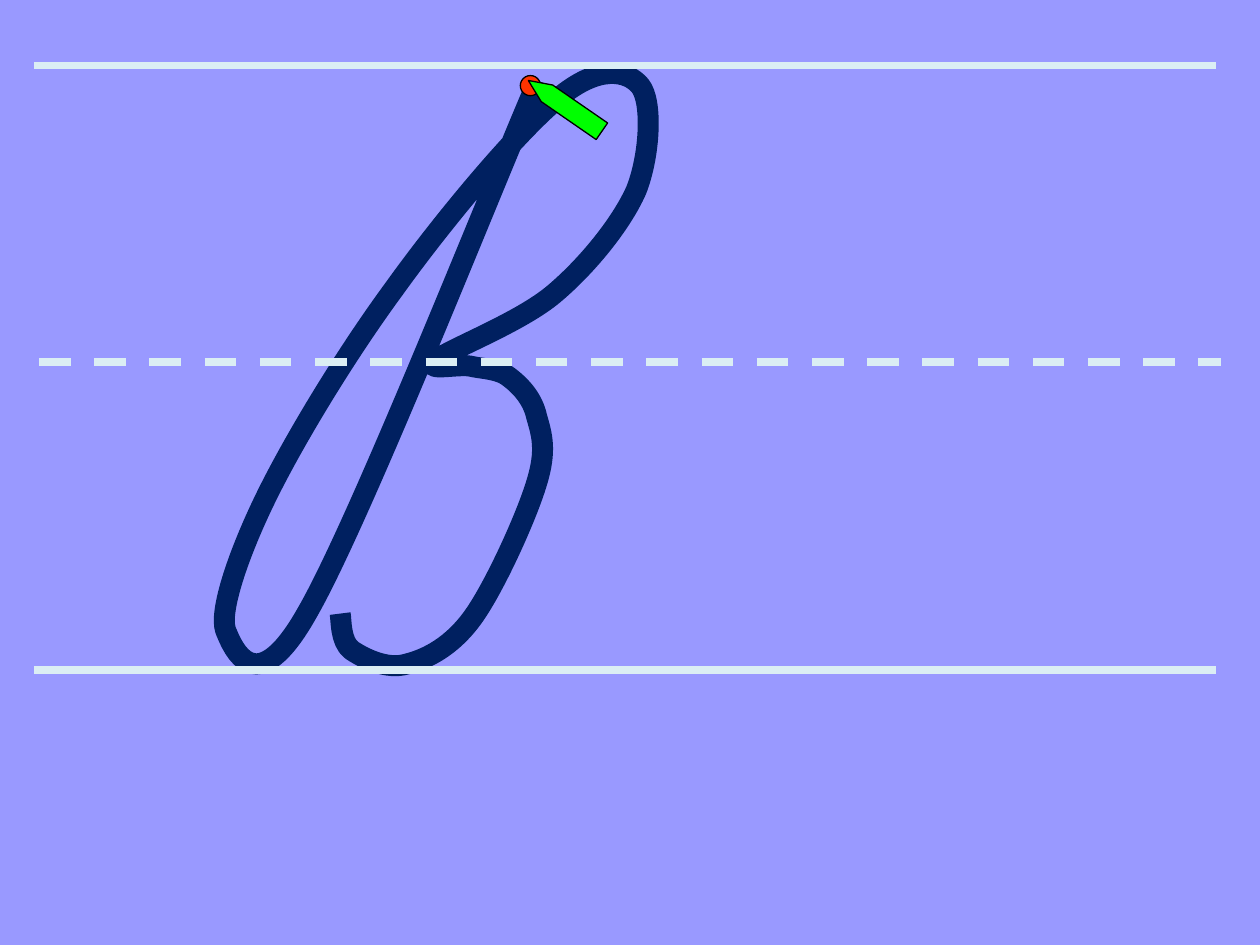
from collections import namedtuple

from lxml.etree import SubElement
from pptx import Presentation
from pptx.dml.color import RGBColor
from pptx.enum.dml import MSO_LINE_DASH_STYLE as Dash
from pptx.enum.shapes import MSO_CONNECTOR, MSO_SHAPE
from pptx.oxml.ns import qn
from pptx.util import Inches, Pt

LILAC = RGBColor(0x99, 0x99, 0xFF)
NAVY = RGBColor(0x00, 0x20, 0x60)
PALE_BLUE = RGBColor(0xDB, 0xEE, 0xF4)
RED = RGBColor(0xFF, 0x33, 0x00)
GREEN = RGBColor(0x00, 0xFF, 0x00)
BLACK = RGBColor(0, 0, 0)

Box = namedtuple("Box", "left top width height")

# Pen stroke on a grid 344 units wide: a start point, then one Bezier curve
# a row (two control points and an end point).
LETTER_COLUMNS = 344
LETTER_START = (96, 436)
LETTER_CURVES = [
    [(97, 441), (96, 458), (105, 465)],
    [(114, 471), (133, 481), (149, 476)],
    [(165, 472), (185, 462), (202, 438)],
    [(219, 414), (244, 359), (252, 332)],
    [(260, 306), (256, 294), (252, 280)],
    [(249, 266), (240, 256), (231, 249)],
    [(223, 242), (211, 242), (201, 240)],
    [(191, 237), (161, 245), (172, 235)],
    [(183, 226), (239, 205), (266, 182)],
    [(292, 160), (319, 127), (331, 100)],
    [(342, 72), (344, 29), (334, 17)],
    [(324, 5), (301, 0), (269, 27)],
    [(236, 54), (177, 125), (139, 178)],
    [(100, 231), (59, 299), (37, 344)],
    [(15, 389), (0, 434), (5, 449)],
    [(11, 464), (29, 508), (70, 435)],
    [(112, 362), (215, 101), (253, 13)],
]


def inch_box(*lengths):
    return Box(*map(Inches, lengths))


def style_line(line, color, width):
    line.color.rgb = color
    line.width = Pt(width)


def add_letter(slide, box):
    """Draw the cursive letter as one open outline of Bezier curves."""
    builder = slide.shapes.build_freeform(*LETTER_START, scale=box.width / LETTER_COLUMNS)
    builder.add_line_segments([point for curve in LETTER_CURVES for point in curve], close=False)
    letter = builder.convert_to_shape(box.left, box.top)
    letter.shadow.inherit = False
    letter.fill.background()
    style_line(letter.line, NAVY, 12)

    # Each three straight segments become one cubic curve.
    outline = next(letter.element.iter(qn("a:path")))
    segments = outline.findall(qn("a:lnTo"))
    for first in range(0, len(segments), 3):
        curve = SubElement(outline, qn("a:cubicBezTo"))
        for segment in segments[first:first + 3]:
            curve.append(segment[0])
            outline.remove(segment)


def add_rule(slide, left, top, width, dash=None):
    rule = slide.shapes.add_connector(MSO_CONNECTOR.STRAIGHT, left, top, left + width, top)
    style_line(rule.line, PALE_BLUE, 4.5)
    if dash:
        rule.line.dash_style = dash
    SubElement(rule.element.spPr, qn("a:effectLst"))


def add_ruled_lines(slide, box):
    """Rule the top, middle and base lines of the writing area."""
    add_rule(slide, box.left, box.top, box.width)
    add_rule(slide, box.left + Inches(0.04), box.top + int(box.height * 0.49), box.width, Dash.DASH)
    add_rule(slide, box.left, box.top + box.height, box.width)


def add_marker(slide, kind, box, color):
    marker = slide.shapes.add_shape(kind, *box)
    marker.shadow.inherit = False
    marker.fill.solid()
    marker.fill.fore_color.rgb = color
    style_line(marker.line, BLACK, 0.75)
    return marker


def add_pen(slide, box):
    """Place the red start dot at the top left and the green pen below it."""
    size = box.height // 2
    add_marker(slide, MSO_SHAPE.FLOWCHART_CONNECTOR, Box(box.left, box.top, size, size), RED)
    pen = add_marker(slide, MSO_SHAPE.PENTAGON,
                     Box(box.left, box.top + size, box.width, size), GREEN)
    pen.adjustments[0] = 1.124
    pen.rotation = 214.6


def main():
    presentation = Presentation()
    presentation.slide_width = Inches(10)
    presentation.slide_height = Inches(7.5)
    slide = presentation.slides.add_slide(presentation.slide_layouts[6])
    slide.background.fill.solid()
    slide.background.fill.fore_color.rgb = LILAC

    add_letter(slide, inch_box(1.74, 0.51, 3.44, 5.07))
    add_ruled_lines(slide, inch_box(0.27, 0.52, 9.38, 4.8))
    add_pen(slide, inch_box(4.13, 0.6, 0.71, 0.32))
    presentation.save("out.pptx")


if __name__ == "__main__":
    main()
